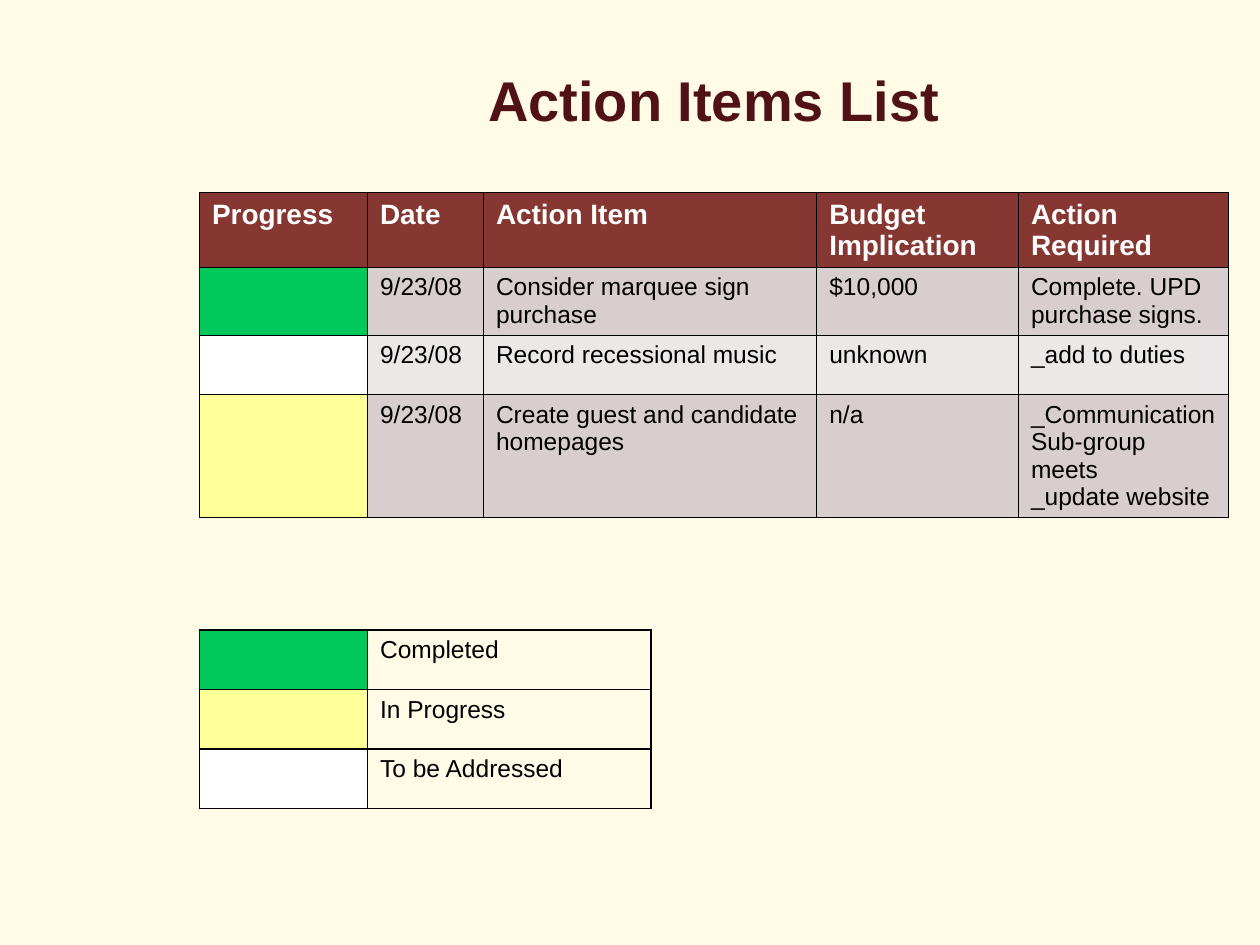
"""Build the action items slide with its progress table and colour legend."""
from lxml import etree
from pptx import Presentation
from pptx.dml.color import RGBColor
from pptx.enum.text import MSO_ANCHOR, PP_ALIGN
from pptx.oxml.ns import qn
from pptx.util import Pt

TOP = MSO_ANCHOR.TOP
CENTER = PP_ALIGN.CENTER

TITLE = "Action Items List"
HEADERS = ["Progress", "Date", "Action Item", "Budget Implication", "Action Required"]
ITEMS = [
    ("done", "9/23/08", "Consider marquee sign purchase", "$10,000",
     "Complete. UPD purchase signs."),
    ("open", "9/23/08", "Record recessional music", "unknown", "_add to duties"),
    ("active", "9/23/08", "Create guest and candidate homepages", "n/a",
     "_Communication Sub-group meets\n_update website"),
]
LEGEND = [("done", "Completed"), ("active", "In Progress"), ("open", "To be Addressed")]

THEME = {
    "background": "FFFBE7",
    "border": "000000",
    "header": "863731",
    "bands": ["D9CECE", "EDE8E8"],
    "status": {"done": "00C85A", "active": "FFFF99", "open": "FFFFFF"},
    "title_font": {"name": "Arial", "size": Pt(32), "bold": True, "color": "501215"},
    "header_font": {"name": "Arial", "size": Pt(16), "bold": True, "color": "FFFFFF"},
    "body_font": {"name": "Arial", "size": Pt(14), "bold": False, "color": "000000"},
}

SLIDE_SIZE = (720, 540)
TITLE_BOX = {"left": Pt(144), "top": Pt(30), "width": Pt(528), "height": Pt(66)}
TABLE_LEFT = 114
ITEMS_TOP, LEGEND_TOP = 110, 360
ITEM_COLUMNS = [96, 66.25, 190.5, 115.25, 120]
ITEM_ROWS = [42.8, 38.8, 34, 70.2]
LEGEND_COLUMNS = [96, 162]
LEGEND_ROWS = [34] * len(LEGEND)


def format_font(font, values):
    for name, value in values.items():
        if name == "color":
            font.color.rgb = RGBColor.from_string(value)
        else:
            setattr(font, name, value)


def set_fill(fill, color):
    if color is None:
        fill.background()
    else:
        fill.solid()
        fill.fore_color.rgb = RGBColor.from_string(color)


def add_borders(cell, width):
    properties = cell._tc.get_or_add_tcPr()
    for index, side in enumerate(("a:lnL", "a:lnR", "a:lnT", "a:lnB")):
        line = etree.Element(qn(side), w=str(Pt(width)))
        fill = etree.SubElement(line, qn("a:solidFill"))
        etree.SubElement(fill, qn("a:srgbClr"), val=THEME["border"])
        properties.insert(index, line)


def add_grid(slide, top, columns, heights, rows, border):
    frame = slide.shapes.add_table(
        len(rows), len(columns), Pt(TABLE_LEFT), Pt(top), Pt(sum(columns)), Pt(sum(heights)))
    table = frame.table
    for column, width in zip(table.columns, columns):
        column.width = Pt(width)
    for row, height, contents in zip(table.rows, heights, rows):
        row.height = Pt(height)
        for cell, (text, color, font) in zip(row.cells, contents):
            cell.text = text
            set_fill(cell.fill, color)
            add_borders(cell, border)
            for paragraph in cell.text_frame.paragraphs:
                format_font(paragraph.font, font)


def item_rows():
    body, bands = THEME["body_font"], THEME["bands"]
    rows = [[(text, THEME["header"], THEME["header_font"]) for text in HEADERS]]
    for index, (status, *texts) in enumerate(ITEMS):
        band = bands[index % len(bands)]
        rows.append([("", THEME["status"][status], body)]
                    + [(text, band, body) for text in texts])
    return rows


def legend_rows():
    body = THEME["body_font"]
    return [[("", THEME["status"][status], body), (label, None, body)]
            for status, label in LEGEND]


def add_title(slide):
    title = slide.shapes.title
    for name, value in TITLE_BOX.items():
        setattr(title, name, value)
    title.text_frame.text = TITLE
    for name, value in {"vertical_anchor": TOP, "margin_top": Pt(7.2), "word_wrap": True}.items():
        setattr(title.text_frame, name, value)
    paragraph = title.text_frame.paragraphs[0]
    paragraph.alignment = CENTER
    format_font(paragraph.font, THEME["title_font"])


def main():
    presentation = Presentation()
    presentation.slide_width, presentation.slide_height = map(Pt, SLIDE_SIZE)
    slide = presentation.slides.add_slide(presentation.slide_layouts[5])
    set_fill(slide.background.fill, THEME["background"])
    add_title(slide)
    add_grid(slide, ITEMS_TOP, ITEM_COLUMNS, ITEM_ROWS, item_rows(), 0.5)
    add_grid(slide, LEGEND_TOP, LEGEND_COLUMNS, LEGEND_ROWS, legend_rows(), 1)
    presentation.save("out.pptx")


if __name__ == "__main__":
    main()
